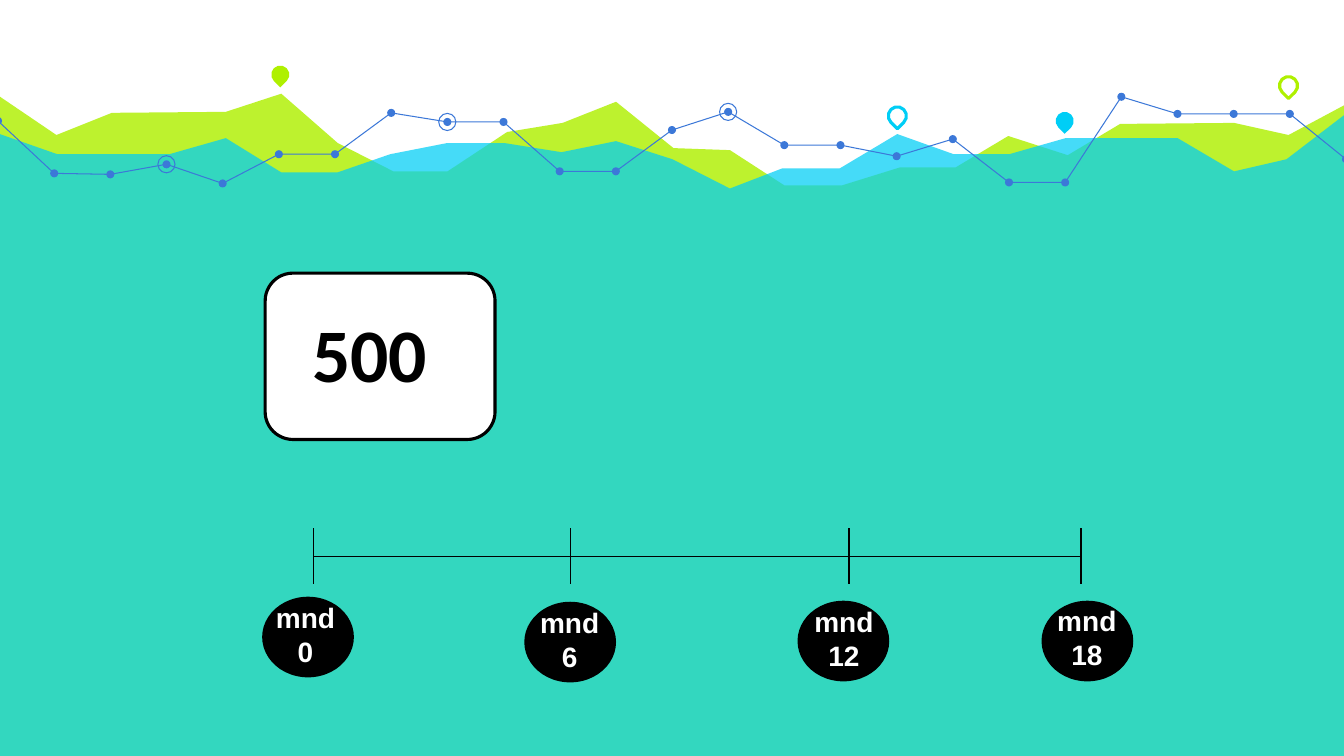
from lxml import etree
from pptx import Presentation
from pptx.dml.color import RGBColor
from pptx.enum.shapes import MSO_CONNECTOR, MSO_SHAPE
from pptx.enum.text import MSO_ANCHOR, PP_ALIGN
from pptx.oxml.ns import qn
from pptx.util import Inches, Pt

LIME, CYAN, BLUE, BLACK, WHITE = "AFF000", "00CEF6", "3C78D8", "000000", "FFFFFF"

LIME_RIDGE = [
    (-0.03, 0.94), (0.56, 1.34), (1.11, 1.12), (2.24, 1.11), (2.79, 0.93), (3.35, 1.42),
    (3.9, 1.7), (4.44, 1.7), (5.03, 1.31), (5.58, 1.22), (6.11, 1.01), (6.68, 1.47),
    (7.24, 1.49), (7.78, 1.84), (8.35, 1.84), (8.93, 1.66), (9.48, 1.66), (10, 1.35),
    (10.59, 1.54), (11.11, 1.23), (12.24, 1.22), (12.78, 1.34), (13.36, 1.03),
    (13.39, 7.55), (-0.03, 7.56),
]
CYAN_RIDGE = [
    (-0.03, 1.32), (0.57, 1.53), (1.68, 1.53), (2.24, 1.37), (2.79, 1.71), (3.35, 1.71),
    (3.87, 1.53), (4.43, 1.42), (5.01, 1.42), (5.57, 1.51), (6.11, 1.4), (6.67, 1.58),
    (7.24, 1.87), (7.76, 1.67), (8.33, 1.67), (8.9, 1.33), (9.46, 1.53), (10.01, 1.53),
    (10.57, 1.37), (11.68, 1.37), (12.24, 1.7), (12.76, 1.58), (13.36, 1.12),
    (13.38, 7.54), (-0.05, 7.54),
]
TREND_START, TREND_WIDTH = -0.02, 13.37
TREND_HEIGHTS = [
    1.2, 1.72, 1.73, 1.63, 1.82, 1.53, 1.53, 1.12, 1.21, 1.21, 1.7, 1.7, 1.29,
    1.11, 1.44, 1.44, 1.55, 1.38, 1.81, 1.81, 0.96, 1.13, 1.13, 1.13, 1.58,
]
TREND_SECTIONS = [(0, 11), (11, 20), (20, 24)]
RINGED_POINTS = [3, 8, 13]

PINS = [  # left, top, colour, filled
    (2.69, 0.65, LIME, True),
    (8.81, 1.06, CYAN, False),
    (10.47, 1.11, CYAN, True),
    (12.69, 0.76, LIME, False),
]
TIMELINE_Y, TICK_TOP, TICK_BOTTOM = 5.52, 5.24, 5.79
TICKS = [3.11, 5.66, 8.42, 10.72]
MONTHS = [  # month, oval left and top, label left and top
    ("0", 2.6, 5.92, 2.6, 5.91),
    ("6", 5.2, 5.97, 5.22, 5.96),
    ("12", 7.91, 5.96, 7.94, 5.95),
    ("18", 10.33, 5.96, 10.35, 5.94),
]


def color(value):
    return RGBColor.from_string(value)


def style(shape, fill=None, line=None, line_width=0.75):
    shape.shadow.inherit = False
    if fill:
        shape.fill.solid()
        shape.fill.fore_color.rgb = color(fill)
    else:
        shape.fill.background()
    if line:
        shape.line.color.rgb = color(line)
        shape.line.width = Pt(line_width)
    else:
        shape.line.fill.background()


def add_preset(slide, preset, left, top, width, height, **look):
    shape = slide.shapes.add_shape(
        preset, Inches(left), Inches(top), Inches(width), Inches(height))
    style(shape, **look)
    return shape


def add_circle(slide, center, diameter, **look):
    left, top = (value - diameter / 2 for value in center)
    add_preset(slide, MSO_SHAPE.OVAL, left, top, diameter, diameter, **look)


def add_outline(slide, points, close, **look):
    corners = [(Inches(x), Inches(y)) for x, y in points]
    builder = slide.shapes.build_freeform(*corners[0])
    builder.add_line_segments(corners[1:], close=close)
    shape = builder.convert_to_shape()
    style(shape, **look)
    return shape


def add_ridge(slide, points, fill, opacity):
    shape = add_outline(slide, points, True, fill=fill)
    fill_color = shape.element.spPr.find(qn("a:solidFill")).find(qn("a:srgbClr"))
    etree.SubElement(fill_color, qn("a:alpha"), val=str(opacity * 1000))


def add_pin(slide, left, top, pin_color, filled):
    look = {"fill": pin_color} if filled else {"line": pin_color, "line_width": 2.25}
    pin = add_preset(slide, MSO_SHAPE.TEAR, left, top, 0.18, 0.18, **look)
    pin.rotation = 135


def add_trend(slide):
    step = TREND_WIDTH / (len(TREND_HEIGHTS) - 1)
    points = [(TREND_START + index * step, y) for index, y in enumerate(TREND_HEIGHTS)]
    for first, last in TREND_SECTIONS:
        add_outline(slide, points[first:last + 1], False, line=BLUE)
    for point in points:
        add_circle(slide, point, 0.08, fill=BLUE)
    for index in RINGED_POINTS:
        add_circle(slide, points[index], 0.17, line=BLUE)


def add_line(slide, x1, y1, x2, y2):
    line = slide.shapes.add_connector(
        MSO_CONNECTOR.STRAIGHT, Inches(x1), Inches(y1), Inches(x2), Inches(y2))
    line.line.color.rgb = color(BLACK)
    line.line.width = Pt(1)
    etree.SubElement(line.element.spPr, qn("a:effectLst"))


def write(shape, lines, size, font, text_color, alignment):
    frame = shape.text_frame
    frame.word_wrap = True
    frame.vertical_anchor = MSO_ANCHOR.TOP
    frame.text = "\n".join(lines)
    for paragraph in frame.paragraphs:
        paragraph.alignment = alignment
        paragraph.font.size = Pt(size)
        paragraph.font.name = font
        paragraph.font.bold = True
        paragraph.font.color.rgb = color(text_color)


def add_month(slide, month, oval_left, oval_top, label_left, label_top):
    add_preset(slide, MSO_SHAPE.OVAL, oval_left, oval_top, 0.91, 0.8, fill=BLACK)
    label = slide.shapes.add_textbox(
        Inches(label_left), Inches(label_top), Inches(0.86), Inches(0.77))
    write(label, ["mnd", month], 20, "Arial", WHITE, PP_ALIGN.CENTER)


def add_amount_card(slide):
    add_preset(slide, MSO_SHAPE.ROUNDED_RECTANGLE, 2.63, 2.71, 2.28, 1.65,
               fill=WHITE, line=BLACK, line_width=2.25)
    amount = add_preset(slide, MSO_SHAPE.RECTANGLE, 3, 3, 1.73, 1.01, fill=WHITE)
    write(amount, ["500"], 54, "Calibri", BLACK, PP_ALIGN.LEFT)


def main():
    presentation = Presentation()
    presentation.slide_width = Inches(13.33)
    presentation.slide_height = Inches(7.5)
    slide = presentation.slides.add_slide(presentation.slide_layouts[6])

    add_ridge(slide, LIME_RIDGE, LIME, 82)
    add_ridge(slide, CYAN_RIDGE, CYAN, 73)
    for pin in PINS:
        add_pin(slide, *pin)
    add_trend(slide)

    add_line(slide, TICKS[0], TIMELINE_Y, TICKS[-1], TIMELINE_Y)
    for x in TICKS:
        add_line(slide, x, TICK_TOP, x, TICK_BOTTOM)
    for month in MONTHS:
        add_month(slide, *month)
    add_amount_card(slide)

    presentation.save("out.pptx")


if __name__ == "__main__":
    main()
